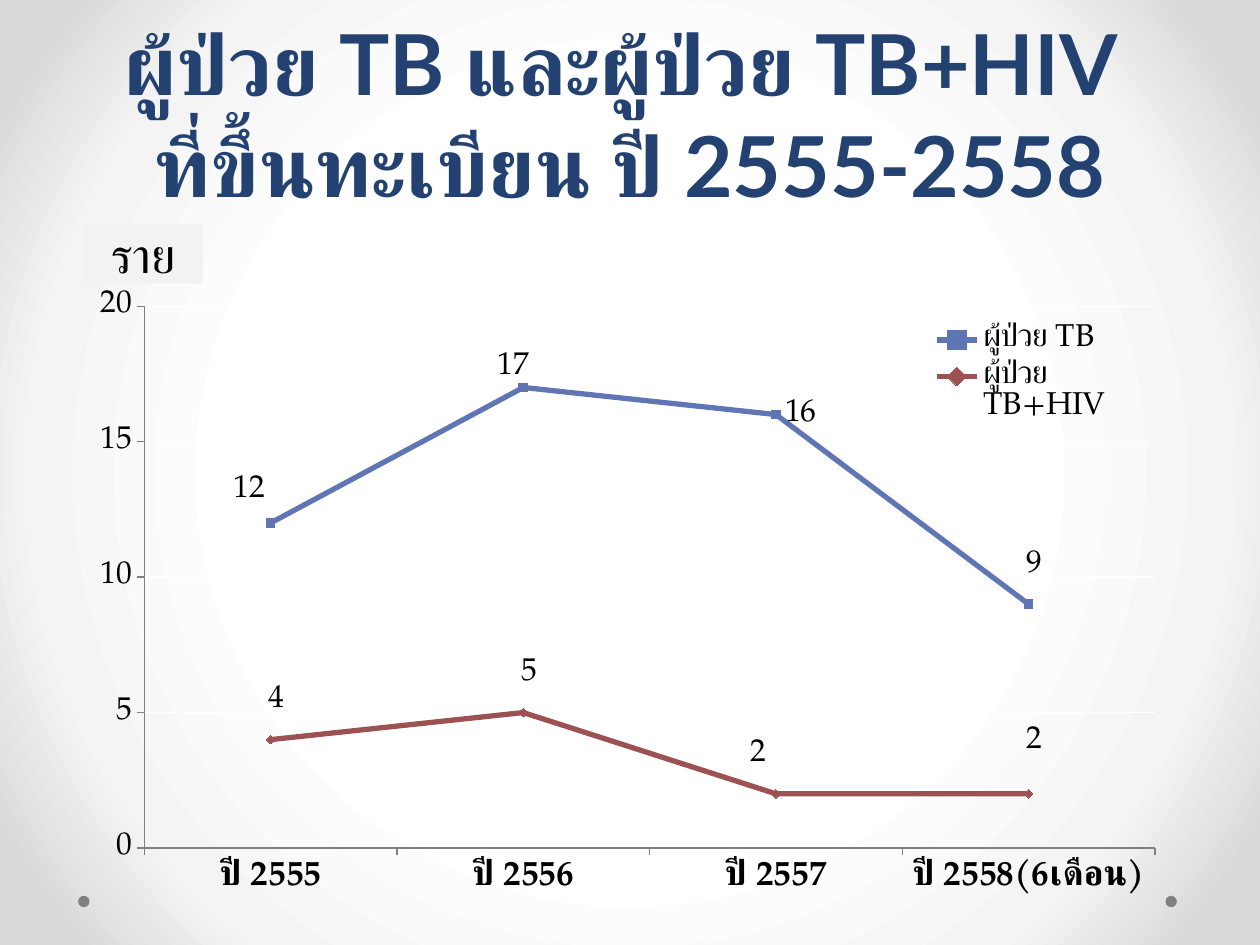
"""Build a slide with a line chart of registered TB and TB+HIV patients."""
from lxml import etree
from pptx import Presentation
from pptx.chart.data import CategoryChartData
from pptx.dml.color import RGBColor
from pptx.enum.chart import (XL_CHART_TYPE, XL_LABEL_POSITION, XL_LEGEND_POSITION,
                             XL_MARKER_STYLE, XL_TICK_MARK)
from pptx.enum.shapes import MSO_SHAPE
from pptx.enum.text import MSO_ANCHOR, PP_ALIGN
from pptx.oxml import parse_xml
from pptx.oxml.ns import qn
from pptx.util import Inches, Pt

LINE_MARKERS = XL_CHART_TYPE.LINE_MARKERS
LABEL_RIGHT = XL_LABEL_POSITION.RIGHT
LEGEND_RIGHT = XL_LEGEND_POSITION.RIGHT
SQUARE, DIAMOND = XL_MARKER_STYLE.SQUARE, XL_MARKER_STYLE.DIAMOND
OUTSIDE = XL_TICK_MARK.OUTSIDE
OVAL, RECT = MSO_SHAPE.OVAL, MSO_SHAPE.RECTANGLE
MIDDLE, BOTTOM = MSO_ANCHOR.MIDDLE, MSO_ANCHOR.BOTTOM
CENTER = PP_ALIGN.CENTER

WHITE = RGBColor(0xFF, 0xFF, 0xFF)
BLACK = RGBColor(0x00, 0x00, 0x00)
NAVY = RGBColor(0x23, 0x42, 0x71)
BLUE = RGBColor(0x60, 0x76, 0xB4)
RED = RGBColor(0x9C, 0x52, 0x52)
GRAY = RGBColor(0x80, 0x80, 0x80)
PALE = RGBColor(0xF2, 0xF2, 0xF2)
BG_STOPS = [(50, WHITE), (76, RGBColor(0xF4, 0xF4, 0xF4)), (92, RGBColor(0xDA, 0xDA, 0xDA))]
TITLE_FONT, BODY_FONT = "Lato", "TeX Gyre Pagella"
C_NS = "http://schemas.openxmlformats.org/drawingml/2006/chart"
A_NS = "http://schemas.openxmlformats.org/drawingml/2006/main"


def style_font(font, name, size, color, bold=False):
    font.name, font.size, font.bold = name, Pt(size), bold
    font.color.rgb = color
    etree.SubElement(font._element, qn("a:cs")).set("typeface", name)


def add_layout(parent, index, **values):
    for old in parent.findall(qn("c:layout")):
        parent.remove(old)
    items = "".join(f'<c:{k} val="{v}"/>' for k, v in values.items())
    parent.insert(index, parse_xml(
        f'<c:layout xmlns:c="{C_NS}"><c:manualLayout>{items}</c:manualLayout></c:layout>'))


prs = Presentation()
prs.slide_width, prs.slide_height = Inches(10), Inches(7.5)
W, H = prs.slide_width, prs.slide_height
s = prs.slides.add_slide(prs.slide_layouts[6])

fill = s.background.fill
fill.gradient()
grad = fill._fill._gradFill
for child in list(grad):
    grad.remove(child)
stops = "".join(f'<a:gs pos="{pos * 1000}"><a:srgbClr val="{c}"/></a:gs>' for pos, c in BG_STOPS)
grad.append(parse_xml(f'<a:gsLst xmlns:a="{A_NS}">{stops}</a:gsLst>'))
grad.append(parse_xml(
    f'<a:path xmlns:a="{A_NS}" path="circle">'
    '<a:fillToRect l="50000" t="50000" r="50000" b="50000"/></a:path>'))

for x in (0.62, 9.25):
    sp = s.shapes.add_shape(OVAL, Inches(x), Inches(7.11), Inches(0.09), Inches(0.09))
    sp.shadow.inherit = False
    sp.fill.solid()
    sp.fill.fore_color.rgb = GRAY
    sp.line.fill.background()

sp = s.shapes.add_textbox(int(W * 0.05), 0, int(W * 0.9), Inches(1.75))
tf = sp.text_frame
tf.word_wrap = True
tf.vertical_anchor = BOTTOM
p = tf.paragraphs[0]
p.text = "ผู้ป่วย TB และผู้ป่วย TB+HIV \vที่ขึ้นทะเบียน ปี 2555-2558"
p.alignment = CENTER
p.line_spacing = Pt(58)
for r in p.runs:
    style_font(r.font, TITLE_FONT, 48, NAVY, True)

data = CategoryChartData()
data.categories = ["ปี 2555", "ปี 2556", "ปี 2557", "ปี 2558(6เดือน)"]
data.add_series("ผู้ป่วย TB", [12, 17, 16, 9])
data.add_series("ผู้ป่วย TB+HIV", [4, 5, 2, 2])
chart = s.shapes.add_chart(LINE_MARKERS, int(W * 0.05), int(H * 0.29),
                           Inches(9.22), Inches(5.12), data).chart
style_font(chart.font, BODY_FONT, 18, BLACK)
chart.has_title = False
add_layout(chart._chartSpace.chart.plotArea, 0, layoutTarget="inner", xMode="edge",
           yMode="edge", x=0.07, y=0.05, w=0.87, h=0.84)

cat, val = chart.category_axis, chart.value_axis
style_font(cat.tick_labels.font, BODY_FONT, 20, BLACK, True)
val.minimum_scale, val.maximum_scale, val.major_unit = 0, 20, 5
val.has_major_gridlines = True
val.major_gridlines.format.line.color.rgb = WHITE
val.major_gridlines.format.line.width = Pt(0.75)
for axis in (cat, val):
    axis.major_tick_mark = OUTSIDE
    axis.format.line.color.rgb = GRAY
    axis.format.line.width = Pt(0.75)

chart.has_legend = True
legend = chart.legend
legend.position = LEGEND_RIGHT
legend.include_in_layout = False
add_layout(legend._element, 1, xMode="edge", yMode="edge", x=0.74, y=0.07, w=0.17, h=0.17)

SERIES_STYLES = [
    (BLUE, SQUARE, {0: (-0.04, -0.05), 1: (-0.03, -0.03), 3: (-0.01, -0.06)}),
    (RED, DIAMOND, {0: (-0.01, -0.06), 1: (-0.01, -0.06), 2: (-0.03, -0.06), 3: (-0.01, -0.08)}),
]
for series, (color, marker, offsets) in zip(chart.plots[0].series, SERIES_STYLES):
    series.smooth = False
    series.format.line.color.rgb = color
    series.format.line.width = Pt(3)
    series.marker.style, series.marker.size = marker, 5
    series.marker.format.fill.solid()
    series.marker.format.fill.fore_color.rgb = color
    series.marker.format.line.color.rgb = color
    series.data_labels.show_value = True
    series.data_labels.position = LABEL_RIGHT
    for i in offsets:
        series.points[i].data_label.position = LABEL_RIGHT
    for label, (dx, dy) in zip(series._element.xpath(".//c:dLbl"), offsets.values()):
        add_layout(label, 1, x=dx, y=dy)
    for leader in series._element.xpath(".//c:showLeaderLines"):
        leader.set("val", "0")

sp = s.shapes.add_shape(RECT, Inches(0.67), Inches(1.78), Inches(0.94), Inches(0.47))
sp.shadow.inherit = False
sp.fill.solid()
sp.fill.fore_color.rgb = PALE
sp.line.fill.background()
tf = sp.text_frame
tf.vertical_anchor = MIDDLE
p = tf.paragraphs[0]
p.text = "ราย"
p.alignment = CENTER
style_font(p.runs[0].font, BODY_FONT, 28, BLACK)

prs.save("out.pptx")
